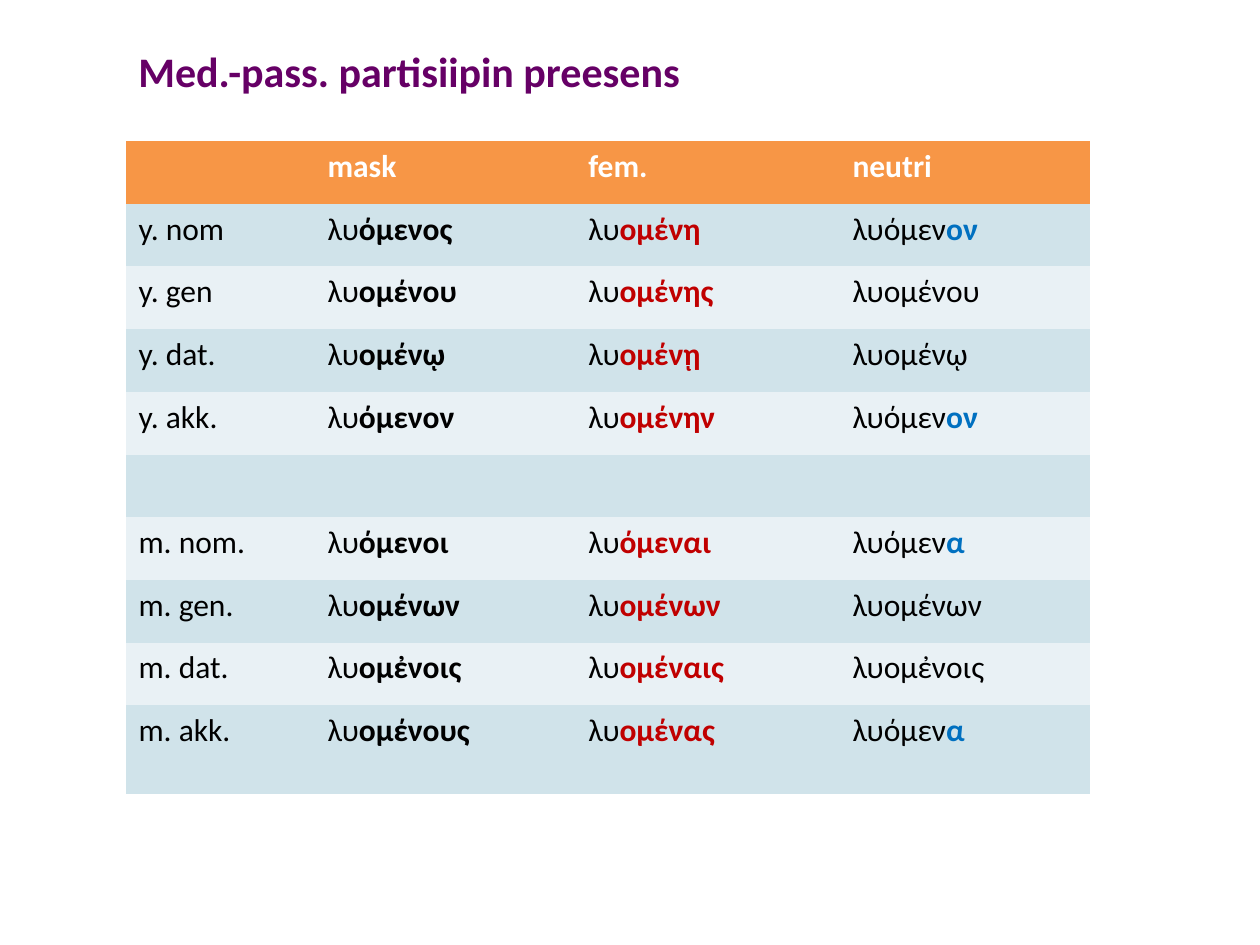
from dataclasses import dataclass
from typing import NamedTuple

import pptx
import pptx.dml.color
import pptx.enum.text
import pptx.util


@dataclass(frozen=True)
class Theme:
    font: str = "Calibri"
    title_size: float = 24
    cell_size: float = 18
    title: str = "660066"
    header_text: str = "FFFFFF"
    text: str = "000000"
    feminine: str = "C00000"
    neuter: str = "0070C0"
    header_fill: str = "F79646"
    bands: tuple[str, str] = ("D0E3EA", "E9F1F5")


class Form(NamedTuple):
    """A word form: plain stem followed by a bold ending."""
    stem: str
    ending: str = ""


class Case(NamedTuple):
    label: str
    masculine: str
    feminine: str
    neuter: Form


THEME = Theme()
STEM = "λυ"
NO_STYLE_NO_GRID = "{2D5ABB26-0587-4C30-8999-92F81FD0307C}"
HEADERS = ("", "mask", "fem.", "neutri")
CASES = (
    Case("y. nom", "όμενος", "ομένη", Form("λυόμεν", "ον")),
    Case("y. gen", "ομένου", "ομένης", Form("λυομένου")),
    Case("y. dat.", "ομένῳ", "ομένῃ", Form("λυομένῳ")),
    Case("y. akk.", "όμενον", "ομένην", Form("λυόμεν", "ον")),
    None,  # gap between singular and plural
    Case("m. nom.", "όμενοι", "όμεναι", Form("λυόμεν", "α")),
    Case("m. gen.", "ομένων", "ομένων", Form("λυομένων")),
    Case("m. dat.", "ομἐνοις", "ομέναις", Form("λυομἐνοις")),
    Case("m. akk.", "ομένους", "ομένας", Form("λυόμεν", "α")),
)
COLUMN_WIDTHS = (108, 149, 151, 143)
ROW_HEIGHT = 35.85
LAST_ROW_HEIGHT = 50.4


def rgb(value: str) -> pptx.dml.color.RGBColor:
    return pptx.dml.color.RGBColor.from_string(value)


def add_text(para, text: str, *, size: float = THEME.cell_size,
             color: str = THEME.text, bold: bool = False) -> None:
    span = para.add_run()
    span.text = text
    span.font.name = THEME.font
    span.font.size = pptx.util.Pt(size)
    span.font.bold = bold
    span.font.color.rgb = rgb(color)


def add_form(cell, form: Form, color: str) -> None:
    para = cell.text_frame.paragraphs[0]
    add_text(para, form.stem)
    if form.ending:
        add_text(para, form.ending, color=color, bold=True)


def fill_row(row, color: str) -> None:
    for cell in row.cells:
        cell.fill.solid()
        cell.fill.fore_color.rgb = rgb(color)
        cell.text_frame.paragraphs[0].font.size = pptx.util.Pt(THEME.cell_size)


def add_title(page) -> None:
    box = page.shapes.add_textbox(*map(pptx.util.Pt, (72, 22.5, 405, 58.5)))
    box.text_frame.word_wrap = True
    box.text_frame.auto_size = pptx.enum.text.MSO_AUTO_SIZE.NONE
    add_text(box.text_frame.paragraphs[0], "Med.-pass. partisiipin preesens",
             size=THEME.title_size, color=THEME.title, bold=True)


def add_participle_table(page) -> None:
    heights = [ROW_HEIGHT] * len(CASES) + [LAST_ROW_HEIGHT]
    frame = page.shapes.add_table(
        len(heights), len(HEADERS), pptx.util.Pt(72), pptx.util.Pt(80.6),
        pptx.util.Pt(sum(COLUMN_WIDTHS)), pptx.util.Pt(sum(heights)))
    table = frame.table
    table._tbl.tblPr[0].text = NO_STYLE_NO_GRID
    for column, width in zip(table.columns, COLUMN_WIDTHS):
        column.width = pptx.util.Pt(width)
    for row, height in zip(table.rows, heights):
        row.height = pptx.util.Pt(height)

    fill_row(table.rows[0], THEME.header_fill)
    for cell, header in zip(table.rows[0].cells, HEADERS):
        if header:
            add_text(cell.text_frame.paragraphs[0], header,
                     color=THEME.header_text, bold=True)

    colors = (THEME.text, THEME.text, THEME.feminine, THEME.neuter)
    for index, case in enumerate(CASES):
        row = table.rows[index + 1]
        fill_row(row, THEME.bands[index % 2])
        if case is None:
            continue
        forms = (Form(case.label), Form(STEM, case.masculine),
                 Form(STEM, case.feminine), case.neuter)
        for cell, form, color in zip(row.cells, forms, colors):
            add_form(cell, form, color)


def main() -> None:
    deck = pptx.Presentation()
    deck.slide_width = pptx.util.Pt(720)
    deck.slide_height = pptx.util.Pt(540)
    page = deck.slides.add_slide(deck.slide_layouts[6])
    add_title(page)
    add_participle_table(page)
    deck.save("out.pptx")


if __name__ == "__main__":
    main()
